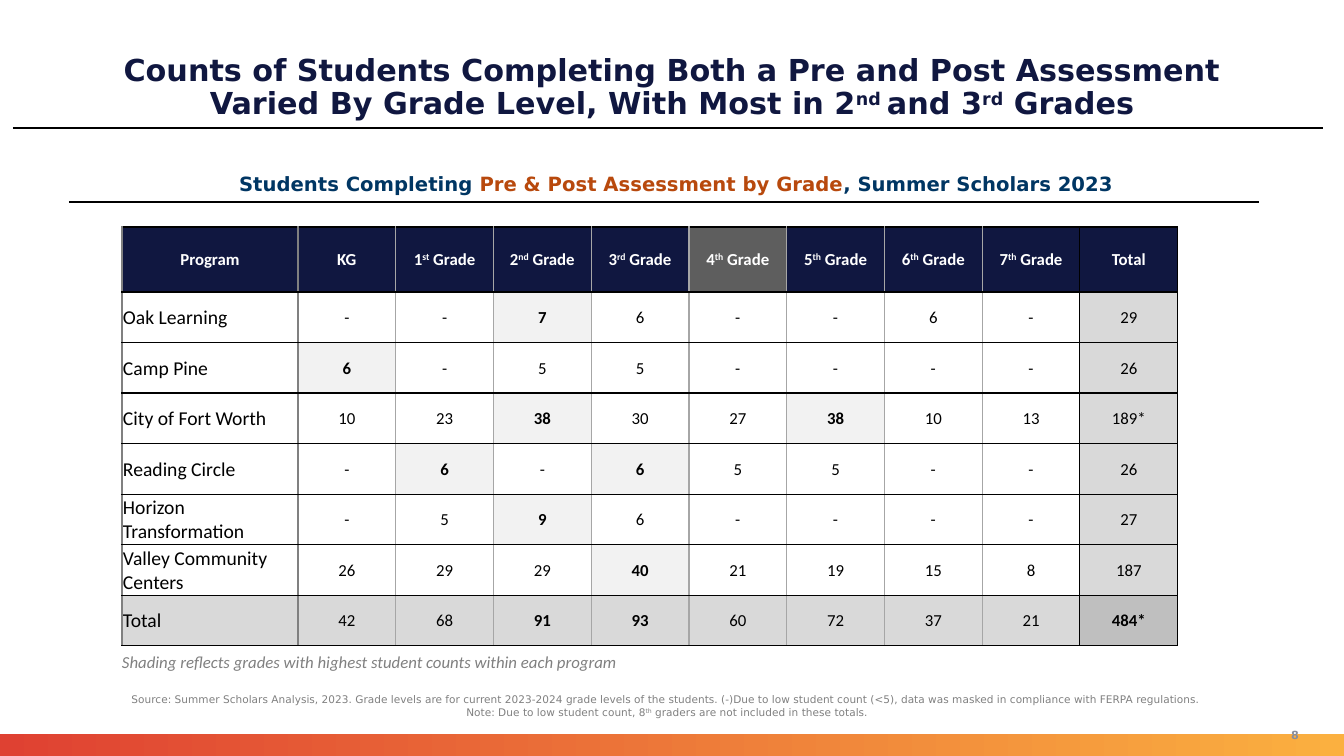
"""Build the slide of student counts by program and grade."""
from lxml.etree import SubElement
from pptx import Presentation
from pptx.dml.color import RGBColor
from pptx.enum.shapes import MSO_CONNECTOR, MSO_SHAPE
from pptx.enum.text import MSO_ANCHOR as ANCHOR, MSO_AUTO_SIZE as AUTO, PP_ALIGN as ALIGN
from pptx.oxml.ns import qn
from pptx.util import Pt

COLORS = {
    "navy": "101740", "blue": "003663", "rust": "B8490D", "black": "000000",
    "white": "FFFFFF", "slate": "5E5E5E", "text_gray": "808080", "page": "888E9D",
    "edge": "A6A6A6", "high": "F2F2F2", "total": "D9D9D9", "grand": "BFBFBF",
    "red": "DF4132", "amber": "FBB040",
}
HEAD_FONT, BODY_FONT = "DejaVu Sans", "Calibri"

# Text between carets is superscript.
TITLE = [
    "Counts of Students Completing Both a Pre and Post Assessment",
    "Varied By Grade Level, With Most in 2^nd ^and 3^rd^ Grades",
]
SUBTITLE = [
    ("Students Completing ", "blue"),
    ("Pre & Post Assessment by Grade", "rust"),
    (", Summer Scholars 2023", "blue"),
]
SHADING_NOTE = "Shading reflects grades with highest student counts within each program"
SOURCE = [
    "Source: Summer Scholars Analysis, 2023. Grade levels are for current 2023-2024 grade "
    "levels of the students. (-)Due to low student count (<5), data was masked in compliance "
    "with FERPA regulations. ",
    "Note: Due to low student count, 8^th^ graders are not included in these totals.",
]
PAGE_NUMBER = "8"
HEADER = ["Program", "KG", "1^st^ Grade", "2^nd^ Grade", "3^rd^ Grade", "4^th^ Grade",
          "5^th^ Grade", "6^th^ Grade", "7^th^ Grade", "Total"]
ROWS = [
    ["Oak Learning", "-", "-", "7", "6", "-", "-", "6", "-", "29"],
    ["Camp Pine", "6", "-", "5", "5", "-", "-", "-", "-", "26"],
    ["City of Fort Worth", "10", "23", "38", "30", "27", "38", "10", "13", "189*"],
    ["Reading Circle", "-", "6", "-", "6", "5", "5", "-", "-", "26"],
    ["Horizon Transformation", "-", "5", "9", "6", "-", "-", "-", "-", "27"],
    ["Valley Community Centers", "26", "29", "29", "40", "21", "19", "15", "8", "187"],
    ["Total", "42", "68", "91", "93", "60", "72", "37", "21", "484*"],
]
EDGES = ["text_gray"] * 2 + ["edge"] * 7 + ["black"] * 2
MUTED_COLUMN = 5
TABLE = (122, 227, 1056, 419)
NAME_WIDTH, HEADER_HEIGHT = 176, 65
RULES = [(13, 128, 1323), (69, 202, 1259)]

PX = 12192000 / 1344


def px(n):
    return round(n * PX)


def rgb(name):
    return RGBColor.from_string(COLORS[name])


def add_runs(p, text, size, color, font=HEAD_FONT, bold=False, italic=False):
    for i, part in enumerate(text.split("^")):
        if part:
            r = p.add_run()
            r.text = part
            f = r.font
            f.size, f.name, f.bold, f.italic = Pt(size), font, bold, italic
            f.color.rgb = rgb(color)
            if i % 2:
                f._element.set("baseline", "30000")


def add_box(slide, box, anchor, margins, align=ALIGN.CENTER):
    tf = slide.shapes.add_textbox(*map(px, box)).text_frame
    tf.word_wrap = True
    tf.vertical_anchor = anchor
    tf.margin_left, tf.margin_top, tf.margin_right, tf.margin_bottom = map(px, margins)
    tf.paragraphs[0].alignment = align
    return tf


def add_rule(slide, left, y, right):
    line = slide.shapes.add_connector(MSO_CONNECTOR.STRAIGHT, px(left), px(y), px(right), px(y))
    line.line.color.rgb = rgb("black")
    line.line.width = Pt(1)
    SubElement(line._element.spPr, qn("a:effectLst"))


def set_borders(cell, col):
    tc_pr = cell._tc.get_or_add_tcPr()
    sides = {"lnL": EDGES[col], "lnR": EDGES[col + 1], "lnT": "black", "lnB": "black"}
    for tag, color in sides.items():
        ln = SubElement(tc_pr, qn("a:" + tag), w=str(Pt(1)))
        SubElement(SubElement(ln, qn("a:solidFill")), qn("a:srgbClr"), val=COLORS[color])


def cell_style(row, col, values):
    """Return fill, text colour and bold for one cell."""
    last_row, last_col = row == len(ROWS), col == len(HEADER) - 1
    if row == 0:
        return ("slate" if col == MUTED_COLUMN else "navy"), "white", True
    counts = sorted(int(v) for v in values[1:-1] if v != "-")
    grade = 0 < col < len(HEADER) - 1 and values[col] != "-"
    top = grade and int(values[col]) >= counts[-2 if last_row else -1]
    if last_row and last_col:
        return "grand", "black", True
    if last_row or last_col:
        return "total", "black", top
    return ("high" if top else None), "black", top


def add_counts_table(slide):
    grid = [HEADER] + ROWS
    table = slide.shapes.add_table(len(grid), len(HEADER), *map(px, TABLE)).table
    table.first_row = table.horz_banding = False
    grade_width = (TABLE[2] - NAME_WIDTH) / (len(HEADER) - 1)
    row_height = (TABLE[3] - HEADER_HEIGHT) / len(ROWS)
    for c, column in enumerate(table.columns):
        column.width = px(grade_width if c else NAME_WIDTH)
    for r, values in enumerate(grid):
        table.rows[r].height = px(row_height if r else HEADER_HEIGHT)
        for c, text in enumerate(values):
            cell = table.cell(r, c)
            fill, color, bold = cell_style(r, c, values)
            cell.vertical_anchor = ANCHOR.MIDDLE
            cell.margin_left = cell.margin_top = cell.margin_right = px(1)
            cell.margin_bottom = 0
            set_borders(cell, c)
            if fill:
                cell.fill.solid()
                cell.fill.fore_color.rgb = rgb(fill)
            else:
                cell.fill.background()
            name = r > 0 and c == 0
            p = cell.text_frame.paragraphs[0]
            p.alignment = ALIGN.LEFT if name else ALIGN.CENTER
            add_runs(p, text, 14 if name else 12, color, BODY_FONT, bold)


def add_footer_band(slide):
    sp = slide.shapes.add_shape(MSO_SHAPE.RECTANGLE, 0, px(734), px(1344), px(22))
    sp.shadow.inherit = False
    sp.line.fill.background()
    sp.fill.gradient()
    sp.fill.gradient_angle = 0
    for stop, color, position in zip(sp.fill.gradient_stops, ("red", "amber"), (0, 1)):
        stop.color.rgb = rgb(color)
        stop.position = position


def main():
    prs = Presentation()
    prs.slide_width, prs.slide_height = px(1344), px(756)
    slide = prs.slides.add_slide(prs.slide_layouts[6])

    add_footer_band(slide)
    tf = add_box(slide, (1270, 720, 50, 30), ANCHOR.MIDDLE, (10, 5, 10, 5))
    add_runs(tf.paragraphs[0], PAGE_NUMBER, 8, "page", bold=True)
    for rule in RULES:
        add_rule(slide, *rule)

    p = add_box(slide, (67, 38, 1210, 101), ANCHOR.MIDDLE, (5, 10, 5, 10)).paragraphs[0]
    p.line_spacing = 0.9
    for i, line in enumerate(TITLE):
        if i:
            p.add_line_break()
        add_runs(p, line, 21.6, "navy", bold=True)

    p = add_box(slide, (71, 149, 1210, 51), ANCHOR.BOTTOM, (0, 5, 0, 5)).paragraphs[0]
    p.space_before = Pt(6)
    for text, color in SUBTITLE:
        add_runs(p, text, 14, color, bold=True)

    add_counts_table(slide)

    tf = add_box(slide, (112, 647, 519, 30), ANCHOR.TOP, (10, 5, 10, 5), ALIGN.LEFT)
    tf.word_wrap = False
    tf.auto_size = AUTO.SHAPE_TO_FIT_TEXT
    add_runs(tf.paragraphs[0], SHADING_NOTE, 12, "text_gray", BODY_FONT, italic=True)

    tf = add_box(slide, (82, 683, 1165, 46), ANCHOR.MIDDLE, (5, 0, 0, 0))
    for i, line in enumerate(SOURCE):
        p = tf.add_paragraph() if i else tf.paragraphs[0]
        p.alignment = ALIGN.CENTER
        add_runs(p, line, 7.5, "text_gray")

    prs.save("out.pptx")


if __name__ == "__main__":
    main()
